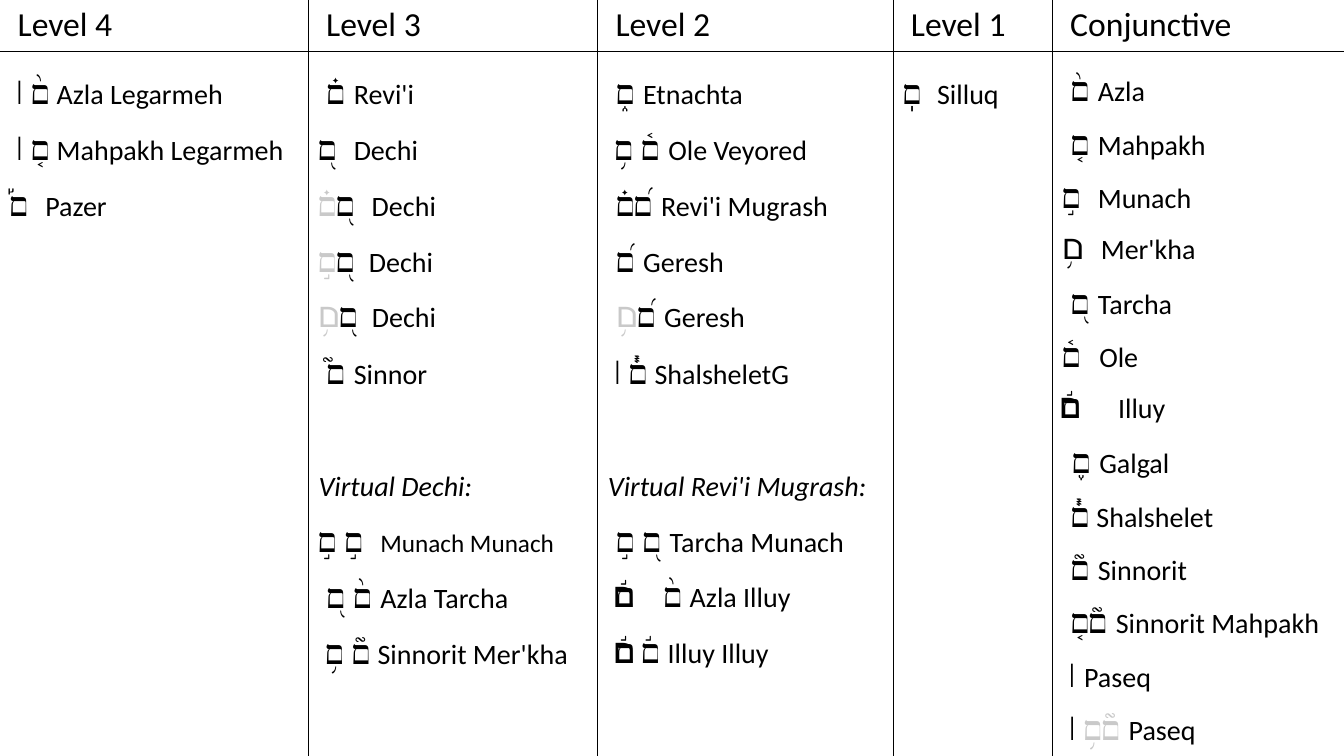
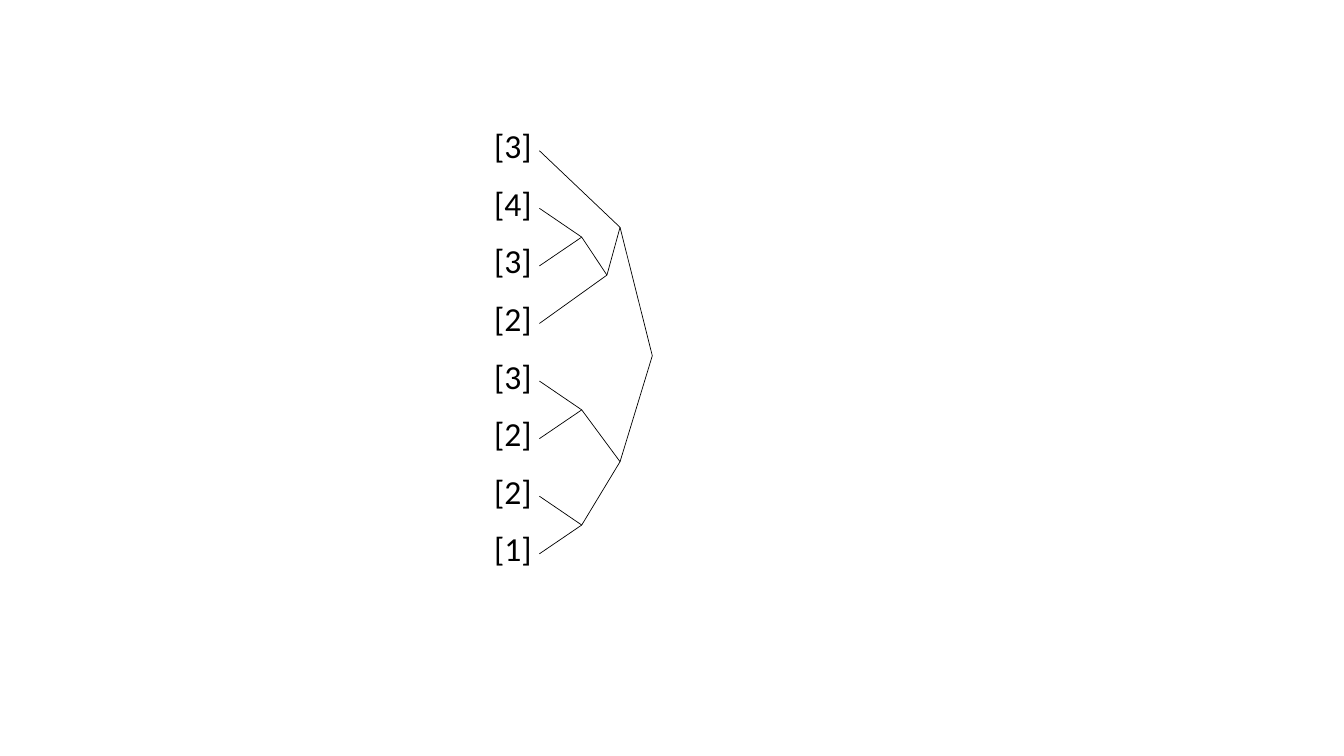
from lxml import etree
from pptx import Presentation
from pptx.dml.color import RGBColor
from pptx.enum.shapes import MSO_CONNECTOR
from pptx.oxml.ns import qn
from pptx.util import Inches, Pt

STRAIGHT = MSO_CONNECTOR.STRAIGHT
WIDE, HIGH = 13.33, 7.5
COLORS = {"ink": "000000", "paper": "FFFFFF", "faint": "C9C9C9"}
LATIN, MARK = "Calibri", "Lato"

# A leading sign sets the format of a run; runs are split by "|".
# The last run of a line is its name, the others are marks.
STYLES = {
    "_": {"font": LATIN},
    "~": {"color": "faint"},
    "=": {"font": LATIN, "color": "faint"},
    ".": {"size": 20},
    "^": {"size": 28},
    "#": {"size": 28, "font": LATIN},
    "-": {"size": 18},
    "*": {"italic": True},
}

# Heading, column width, line pitch in points, lines
LEVELS = [
    ("Level 4", 3.06, 40, [
        " ם֨ ׀|. |Azla Legarmeh",
        " ם֤ ׀|. |Mahpakh Legarmeh",
        "ם֡  |Pazer",
    ]),
    ("Level 3", 2.87, 40, [
        " ם֗ |Revi'i",
        "ם֭  |Dechi",
        "ם֭|~ם֗  |Dechi",
        "ם֭|~ם֣|.  |Dechi",
        "ם֭|=ם|~֥|.  |Dechi",
        " ם֮ |Sinnor",
        "*Virtual Dechi:",
        "ם֣ ם֣  |-Munach Munach",
        " ם֨ ם֖ |Azla Tarcha",
        ". |ם֘ ם֥|. |Sinnorit Mer'kha",
    ]),
    ("Level 2", 2.93, 40, [
        " ם֑ |Etnachta",
        ". |ם֫ ם֥ |Ole Veyored",
        " ם֝ם֗ |Revi'i Mugrash",
        " ם֝ |Geresh",
        " ם֝|=ם|~֥ |Geresh",
        " ם֓ ׀|. |ShalsheletG",
        "*Virtual Revi'i Mugrash:",
        " ם֖ ם֣ |Tarcha Munach",
        " ם֨ |_ם֬ |Azla Illuy",
        " ם|_֬ ם֬ |Illuy Illuy",
    ]),
    ("Level 1", 1.58, 40, ["םֽ |. |Silluq"]),
    ("Conjunctive", 2.9, 38, [
        " ם֨ |Azla",
        " ם֤ |Mahpakh",
        "ם֣  |Munach",
        "_ם|֥  |Mer'kha",
        " ם֖ |Tarcha",
        "ם֫ |^ |Ole",
        "_ם֬ |# |Illuy",
        "^ |ם֪ |Galgal",
        " ם֓|. |Shalshelet",
        " ם֘ |Sinnorit",
        " ם֘ם֤ |Sinnorit Mahpakh",
        " ׀ |Paseq",
        " |~ם֘ם֥| ׀ |Paseq",
    ]),
]

LEAVES = [3, 4, 3, 2, 3, 2, 2, 1]
# A node is (x in inches from the leaves, y in rows, children); a number is a leaf.
LOW = (0.67, 2.16, [(0.42, 1.5, [1, 2]), 3])
UPPER = (0.8, 1.33, [0, LOW])
UNDER = (0.8, 5.4, [(0.42, 4.5, [4, 5]), (0.42, 6.5, [6, 7])])
ROOT = (1.12, 3.56, [UPPER, UNDER])


def put(para, text, size=24, font=LATIN, color="ink", italic=False):
    run = para.add_run()
    run.text = text
    face = run.font
    face.size, face.name, face.italic = Pt(size), font, italic
    face.color.rgb = RGBColor.from_string(COLORS[color])
    script = etree.SubElement(face._element, qn("a:cs"))
    script.set("typeface", font)


def edge(cell, **sides):
    """Draw 1 pt borders; sides L, R, T and B name their colours."""
    props = cell._tc.get_or_add_tcPr()
    for place, side in enumerate("LRTB"):
        line = etree.Element(qn("a:ln" + side), w=str(Pt(1)))
        fill = etree.SubElement(line, qn("a:solidFill"))
        etree.SubElement(fill, qn("a:srgbClr"), val=COLORS[sides[side]])
        props.insert(place, line)


def grid(slide, box, cols, rows):
    """Add a plain table with the given column widths and row heights."""
    frame = slide.shapes.add_table(len(rows), len(cols), *map(Inches, box))
    table = frame.table
    table.first_row = table.horz_banding = False
    for col, width in zip(table.columns, cols):
        col.width = Inches(width)
    for row, height in zip(table.rows, rows):
        row.height = Inches(height)
    for cell in table.iter_cells():
        cell.fill.background()
    return table


def fill_list(cell, lines, pitch):
    frame = cell.text_frame
    for i, line in enumerate(lines):
        para = frame.add_paragraph() if i else frame.paragraphs[0]
        para.line_spacing = Pt(pitch)
        if line.startswith("*"):
            para.space_before = Pt(pitch)
        parts = line.split("|")
        for j, part in enumerate(parts):
            is_name = j == len(parts) - 1
            base = {"size": 20} if is_name else {"font": MARK}
            style = STYLES.get(part[0], {})
            put(para, part[1:] if style else part, **{**base, **style})


def levels(slide, box):
    head = 0.48
    table = grid(slide, box, [level[1] for level in LEVELS],
                 [head, box[3] - head])
    last = len(LEVELS) - 1
    for i, (name, _, pitch, lines) in enumerate(LEVELS):
        top, body = table.cell(0, i), table.cell(1, i)
        put(top.text_frame.paragraphs[0], " " + name)
        fill_list(body, lines, pitch)
        left = "ink" if i else "paper"
        right = "ink" if i < last else "paper"
        edge(top, L=left, R=right, T="paper", B="ink")
        edge(body, L=left, R=right, T="ink", B="paper")


def link(slide, start, end):
    line = slide.shapes.add_connector(
        STRAIGHT, *map(Inches, (*start, *end)))
    line.line.color.rgb = RGBColor.from_string(COLORS["ink"])
    line.line.width = Pt(0.5)
    etree.SubElement(line._element.spPr, qn("a:effectLst"))


def branch(slide, node, left, top, step):
    """Draw the lines below a node and return its point."""
    if isinstance(node, int):
        return left, top + node * step
    x, y, kids = node
    point = left + x, top + y * step
    for kid in kids:
        link(slide, branch(slide, kid, left, top, step), point)
    return point


def tree(slide, box):
    left, top, width, height = box
    step = height / len(LEAVES)
    table = grid(slide, box, [width], [step] * len(LEAVES))
    for cell, leaf in zip(table.iter_cells(), LEAVES):
        put(cell.text_frame.paragraphs[0], f"[{leaf}]")
        edge(cell, **dict.fromkeys("LRTB", "paper"))
    branch(slide, ROOT, left + 0.55, top + step / 2, step)


def main():
    deck = Presentation()
    deck.slide_width, deck.slide_height = Inches(WIDE), Inches(HIGH)
    blank = deck.slide_layouts[6]
    levels(deck.slides.add_slide(blank), (0, 0, WIDE, HIGH))
    tree(deck.slides.add_slide(blank), (4.8, 1.21, 3.14, 4.57))
    deck.save("out.pptx")


if __name__ == "__main__":
    main()
